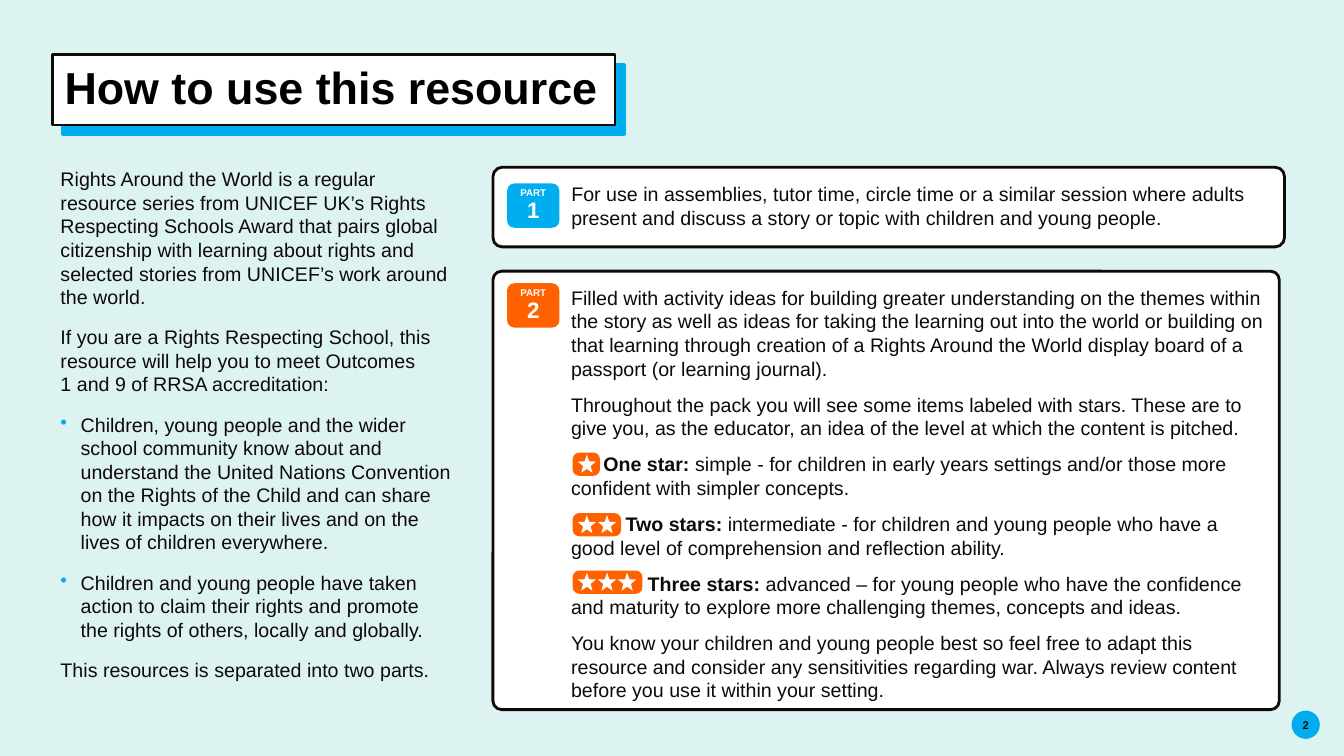
from lxml import etree
from pptx import Presentation
from pptx.dml.color import RGBColor
from pptx.enum.shapes import MSO_SHAPE
from pptx.enum.text import MSO_ANCHOR, MSO_AUTO_SIZE, PP_ALIGN
from pptx.oxml import parse_xml
from pptx.oxml.ns import nsdecls, qn
from pptx.util import Emu, Inches, Pt

ROUNDED, OVAL, STAR = MSO_SHAPE.ROUNDED_RECTANGLE, MSO_SHAPE.OVAL, MSO_SHAPE.STAR_5_POINT
TOP, MIDDLE = MSO_ANCHOR.TOP, MSO_ANCHOR.MIDDLE
LEFT, CENTER = PP_ALIGN.LEFT, PP_ALIGN.CENTER
FIXED = MSO_AUTO_SIZE.NONE
TITLE_ONLY = 5

FONT = "Arial"
COLORS = {"mint": "DDF3F1", "blue": "00AEEF", "orange": "FF6000",
          "ink": "0F0A07", "black": "000000", "white": "FFFFFF"}
WIDTH, HEIGHT = Inches(13.33), Inches(7.5)
PANEL_INSETS = (0.75, 0.12, 0.12, 0.12)

# Positions are percentages of the slide's width and height.
BODY_TOP = 22.13
PANEL_LEFT = 36.68
BADGE_LEFT = 37.73
STARS_LEFT = 42.61

INTRO = [
    "Rights Around the World is a regular resource series from UNICEF UK’s Rights Respecting "
    "Schools Award that pairs global citizenship with learning about rights and selected "
    "stories from UNICEF’s work around the world.",
    "If you are a Rights Respecting School, this resource will help you to meet Outcomes \n"
    "1 and 9 of RRSA accreditation:",
]
OUTCOMES = [
    "Children, young people and the wider school community know about and understand the "
    "United Nations Convention on the Rights of the Child and can share how it impacts on "
    "their lives and on the lives of children everywhere.",
    "Children and young people have taken action to claim their rights and promote \n"
    "the rights of others, locally and globally.",
]
CLOSING = "This resources is separated into two parts."
PART_ONE = ("For use in assemblies, tutor time, circle time or a similar session where adults "
            "present and discuss a story or topic with children and young people.")
PART_TWO = [
    "Filled with activity ideas for building greater understanding on the themes within the "
    "story as well as ideas for taking the learning out into the world or building on that "
    "learning through creation of a Rights Around the World display board of a passport "
    "(or learning journal).",
    "Throughout the pack you will see some items labeled with stars. These are to give you, "
    "as the educator, an idea of the level at which the content is pitched.",
]
# Label, description, top of the star plate
LEVELS = [
    ("One star: ", "simple - for children in early years settings and/or those more confident "
     "with simpler concepts.", 59.87),
    ("Two stars: ", "intermediate - for children and young people who have a good level of "
     "comprehension and reflection ability.", 67.87),
    ("Three stars: ", "advanced – for young people who have the confidence and maturity to "
     "explore more challenging themes, concepts and ideas.", 75.47),
]
ADVICE = ("You know your children and young people best so feel free to adapt this resource and "
          "consider any sensitivities regarding war. Always review content before you use it "
          "within your setting.")


def color(name):
    return RGBColor.from_string(COLORS[name])


def place(left, top, width, height):
    """Turn percentages of the slide into lengths."""
    return (Emu(round(WIDTH * left / 100)), Emu(round(HEIGHT * top / 100)),
            Emu(round(WIDTH * width / 100)), Emu(round(HEIGHT * height / 100)))


def paint(shape, fill, outlined=False):
    shape.fill.solid()
    shape.fill.fore_color.rgb = color(fill)
    if outlined:
        shape.line.color.rgb = color("ink")
        shape.line.width = Pt(2)
    else:
        shape.line.fill.background()


def add_block(shapes, kind, area, fill, outlined=False, corner=None):
    shape = shapes.add_shape(kind, *place(*area))
    shape.shadow.inherit = False
    paint(shape, fill, outlined)
    if corner is not None:
        shape.adjustments[0] = corner
    return shape


def set_frame(shape, insets=(0, 0, 0, 0), anchor=TOP):
    frame = shape.text_frame
    frame.word_wrap = True
    frame.auto_size = FIXED
    frame.vertical_anchor = anchor
    (frame.margin_left, frame.margin_top,
     frame.margin_right, frame.margin_bottom) = map(Inches, insets)
    return frame


def style(span, size, ink="ink", bold=False):
    span.font.name = FONT
    span.font.size = Pt(size)
    span.font.bold = bold
    span.font.color.rgb = color(ink)


def write(para, text, size=14, ink="ink", bold=False, align=LEFT, before=0, spacing=None):
    para.text = text
    para.alignment = align
    para.space_before = Pt(before)
    if spacing:
        para.line_spacing = spacing
    for span in para.runs:
        style(span, size, ink, bold)


def indent(para, first, rest=0):
    """Set the start of the first line and of the other lines, in inches."""
    properties = para._p.get_or_add_pPr()
    properties.set("marL", str(Inches(rest)))
    properties.set("indent", str(Inches(first - rest)))
    return properties


def add_bullet(para):
    properties = indent(para, 0, 0.2)
    bullet_color = etree.SubElement(properties, qn("a:buClr"))
    etree.SubElement(bullet_color, qn("a:srgbClr"), val=COLORS["blue"])
    etree.SubElement(properties, qn("a:buChar"), char="•")


def format_title(title):
    title.left, title.top, title.width, title.height = place(3.9, 7.2, 41.86, 9.33)
    title._element.spPr.append(parse_xml(
        f'<a:prstGeom {nsdecls("a")} prst="roundRect"><a:avLst>'
        '<a:gd name="adj" fmla="val 13900"/></a:avLst></a:prstGeom>'))
    paint(title, "white", outlined=True)
    title._element.spPr.append(parse_xml(
        f'<a:effectLst {nsdecls("a")}><a:outerShdw blurRad="0" dist="{Pt(10)}" dir="2700000" '
        f'algn="tl" rotWithShape="0"><a:srgbClr val="{COLORS["blue"]}"/>'
        '</a:outerShdw></a:effectLst>'))
    frame = set_frame(title, (0.12, 0.08, 0.08, 0.08), MIDDLE)
    write(frame.paragraphs[0], "How to use this resource", 32, "black", True, spacing=0.9)


def add_intro(page):
    box = page.shapes.add_textbox(*place(4.5, BODY_TOP, 29.1, 68.67))
    frame = set_frame(box)
    for index, text in enumerate(INTRO + OUTCOMES + [CLOSING]):
        para = frame.add_paragraph() if index else frame.paragraphs[0]
        if text in OUTCOMES:
            add_bullet(para)
        write(para, text, before=12 if index else 0)


def add_panel(page, top, width, height, corner, texts):
    area = (PANEL_LEFT, top, width, height)
    panel = add_block(page.shapes, ROUNDED, area, "white", True, corner)
    frame = set_frame(panel, PANEL_INSETS)
    for index, text in enumerate(texts):
        para = frame.add_paragraph() if index else frame.paragraphs[0]
        write(para, text, before=9 if index else 0)
    return frame


def add_level(page, frame, count, label, description, top):
    """Write one level and put its plate of stars before the label."""
    para = frame.add_paragraph()
    indent(para, 0.1 + 0.22 * count)
    write(para, label, bold=True, before=9)
    span = para.add_run()
    span.text = description
    style(span, 14)

    shapes = page.shapes.add_group_shape().shapes
    add_block(shapes, ROUNDED, (STARS_LEFT, top, 0.45 + 1.58 * count, 3.07), "orange", corner=0.28)
    for number in range(count):
        area = (STARS_LEFT + 0.38 + 1.5 * number, top + 0.27, 1.35, 2.4)
        add_block(shapes, STAR, area, "white", corner=0.207)


def add_badge(page, number, top, fill):
    badge = add_block(page.shapes, ROUNDED, (BADGE_LEFT, top, 3.9, 5.87), fill)
    frame = set_frame(badge, anchor=MIDDLE)
    write(frame.paragraphs[0], "PART", 7, "white", True, CENTER, spacing=0.95)
    write(frame.add_paragraph(), number, 16, "white", True, CENTER, spacing=0.95)


def add_page_number(page, number):
    dot = add_block(page.shapes, OVAL, (96.1, 94, 2.1, 3.73), "blue")
    frame = set_frame(dot, anchor=MIDDLE)
    write(frame.paragraphs[0], number, 8, bold=True, align=CENTER)


def main():
    deck = Presentation()
    deck.slide_width, deck.slide_height = WIDTH, HEIGHT
    page = deck.slides.add_slide(deck.slide_layouts[TITLE_ONLY])
    page.background.fill.solid()
    page.background.fill.fore_color.rgb = color("mint")

    format_title(page.shapes.title)
    add_page_number(page, "2")
    add_intro(page)
    add_panel(page, BODY_TOP, 58.89, 10.53, 0.116, [PART_ONE])
    frame = add_panel(page, 35.87, 58.51, 58, 0.02, PART_TWO)
    for count, level in enumerate(LEVELS, 1):
        add_level(page, frame, count, *level)
    write(frame.add_paragraph(), ADVICE, before=9)
    add_badge(page, "1", 24.27, "blue")
    add_badge(page, "2", 37.47, "orange")
    deck.save("out.pptx")


if __name__ == "__main__":
    main()
